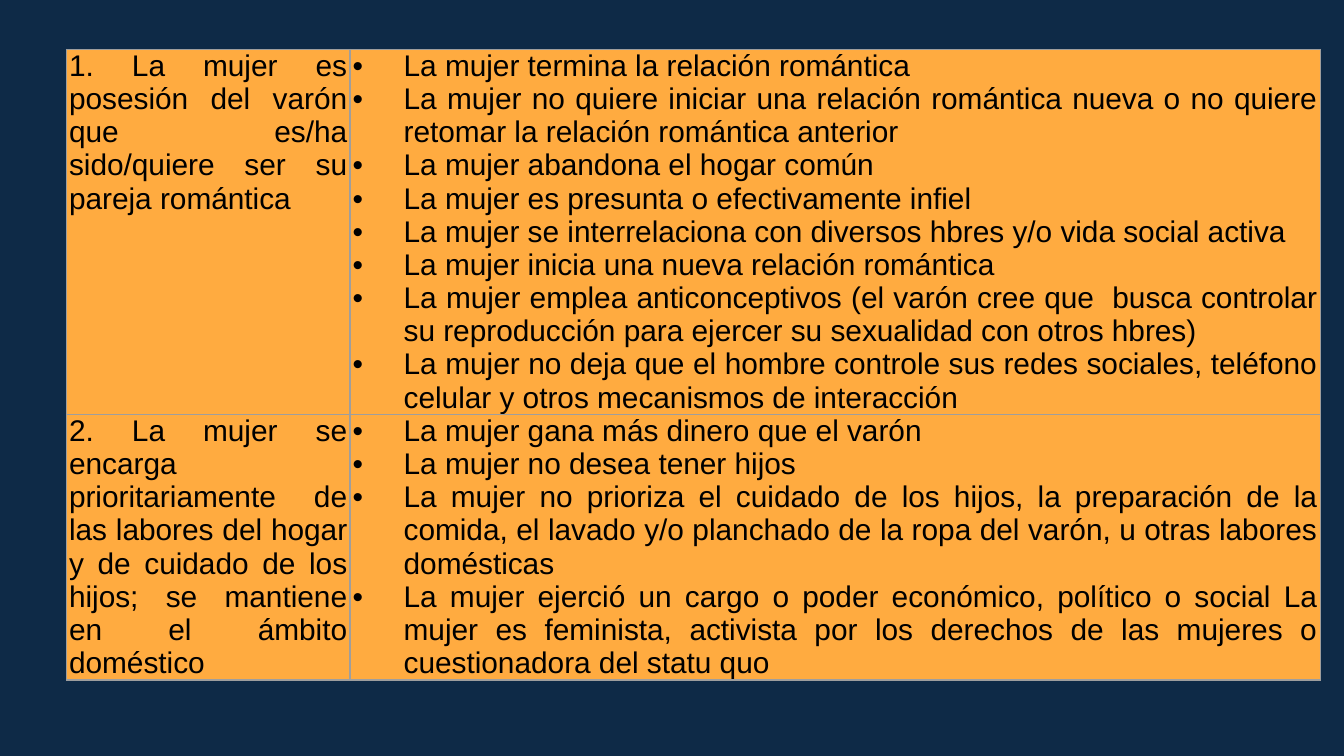
from lxml import etree
from pptx import Presentation
from pptx.dml.color import RGBColor
from pptx.enum.text import PP_ALIGN
from pptx.oxml.ns import qn
from pptx.util import Inches, Pt

JUSTIFY = PP_ALIGN.JUSTIFY
COLORS = {"back": "0E2A47", "cell": "FFAB40", "text": "000000", "line": "9E9E9E"}
WIDE = 10
HIGH = WIDE * 9 / 16
UNITS = 100

ROWS = [
    ("1. La mujer es posesión del varón que es/ha sido/quiere ser su pareja romántica", [
        "La mujer termina la relación romántica",
        "La mujer no quiere iniciar una relación romántica nueva o no quiere retomar la relación romántica anterior",
        "La mujer abandona el hogar común",
        "La mujer es presunta o efectivamente infiel",
        "La mujer se interrelaciona con diversos hbres y/o vida social activa",
        "La mujer inicia una nueva relación romántica",
        "La mujer emplea anticonceptivos (el varón cree que  busca controlar su reproducción para ejercer su sexualidad con otros hbres)",
        "La mujer no deja que el hombre controle sus redes sociales, teléfono celular y otros mecanismos de interacción",
    ]),
    ("2. La mujer se encarga prioritariamente de las labores del hogar y de cuidado de los hijos; se mantiene en el ámbito doméstico", [
        "La mujer gana más dinero que el varón",
        "La mujer no desea tener hijos",
        "La mujer no prioriza el cuidado de los hijos, la preparación de la comida, el lavado y/o planchado de la ropa del varón, u otras labores domésticas",
        "La mujer ejerció un cargo o poder económico, político o social La mujer es feminista, activista por los derechos de las mujeres o cuestionadora del statu quo",
    ]),
]


def color(name):
    return RGBColor.from_string(COLORS[name])


def add_node(parent, tag, **attrs):
    node = etree.SubElement(parent, qn(tag))
    for key, value in attrs.items():
        node.set(key, str(value))
    return node


def add_hue(parent, name):
    add_node(parent, "a:srgbClr", val=COLORS[name])


def write(para, text, size=16, font="Arial", hue="text", align=JUSTIFY, bullet=None):
    para.alignment = align
    run = para.add_run()
    run.text = text
    run.font.size = Pt(size)
    run.font.name = font
    run.font.color.rgb = color(hue)
    if bullet:
        props = para._p.get_or_add_pPr()
        props.set("marL", str(Inches(0.38)))
        props.set("indent", str(-Inches(0.38)))
        add_hue(add_node(props, "a:buClr"), hue)
        add_node(props, "a:buFont", typeface=font)
        add_node(props, "a:buChar", char=bullet)


class Deck:
    def __init__(self):
        self.show = Presentation()
        self.show.slide_width = Inches(WIDE)
        self.show.slide_height = Inches(HIGH)
        self.slide = self.show.slides.add_slide(self.show.slide_layouts[6])
        fill = self.slide.background.fill
        fill.solid()
        fill.fore_color.rgb = color("back")

    def across(self, cols):
        return Inches(WIDE * cols / UNITS)

    def down(self, rows):
        return Inches(HIGH * rows / UNITS)

    def table(self, left, top, widths, heights, rows):
        frame = self.slide.shapes.add_table(
            len(heights), len(widths), self.across(left), self.down(top),
            self.across(sum(widths)), self.down(sum(heights)))
        grid = frame.table
        for col, width in zip(grid.columns, widths):
            col.width = self.across(width)
        for row, height, (head, items) in zip(grid.rows, heights, rows):
            row.height = self.down(height)
            self.cell(row.cells[0], [head])
            self.cell(row.cells[1], items, bullet="•")

    def cell(self, cell, texts, bullet=None):
        cell.margin_left = cell.margin_right = Inches(0.02)
        cell.margin_top = cell.margin_bottom = 0
        for side in ("L", "R", "T", "B"):
            line = add_node(cell._tc.get_or_add_tcPr(), f"a:ln{side}", w=Pt(0.75))
            add_hue(add_node(line, "a:solidFill"), "line")
        cell.fill.solid()
        cell.fill.fore_color.rgb = color("cell")
        frame = cell.text_frame
        for i, text in enumerate(texts):
            para = frame.add_paragraph() if i else frame.paragraphs[0]
            if bullet and i == len(texts) - 1:
                para.space_after = Pt(8)
            write(para, text, bullet=bullet)


def main():
    deck = Deck()
    deck.table(4.94, 6.55, [21.1, 72.2], [48.2, 35.1], ROWS)
    deck.show.save("out.pptx")


if __name__ == "__main__":
    main()
